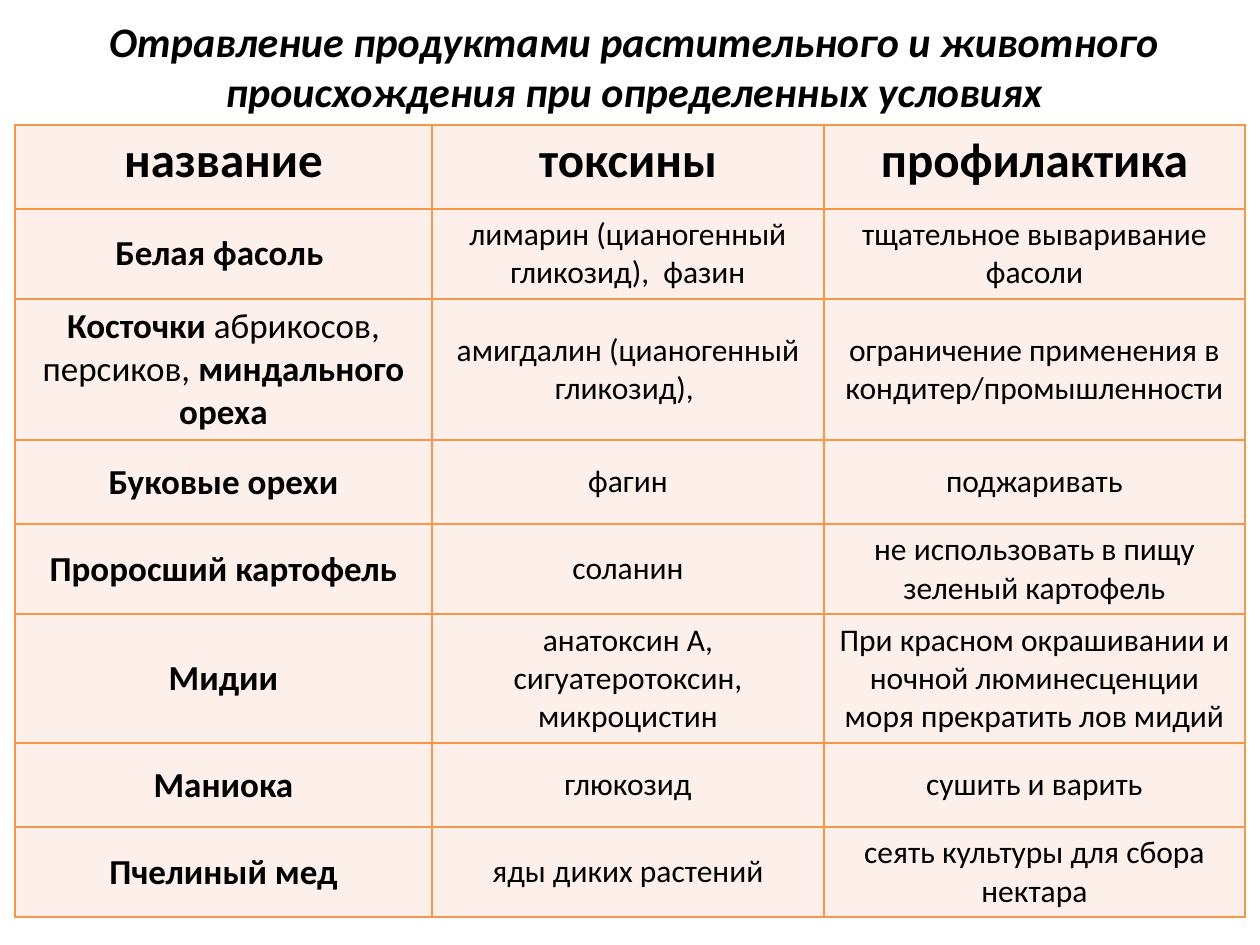
from dataclasses import dataclass

from lxml import etree
from pptx import Presentation
from pptx.dml.color import RGBColor
from pptx.enum.text import MSO_ANCHOR, PP_ALIGN
from pptx.oxml.ns import qn
from pptx.util import Emu, Pt

CENTER = PP_ALIGN.CENTER
TOP, MIDDLE = MSO_ANCHOR.TOP, MSO_ANCHOR.MIDDLE
TITLE_ONLY = 5
PX = 914400 // 126


@dataclass(frozen=True)
class Theme:
    """Colours, font and type sizes of the slide."""
    font: str = "Calibri"
    text: str = "000000"
    fill: str = "FDEFE9"
    border: str = "F79646"
    border_width: int = 1
    title: int = 24
    header: int = 28
    name: int = 20
    body: int = 18


THEME = Theme()

TITLE = "Отравление продуктами растительного и животного происхождения при определенных условиях"
HEADER = ("название", "токсины", "профилактика")
POISONS = [
    ("Белая фасоль ", "лимарин (цианогенный гликозид),  фазин", "тщательное вываривание фасоли"),
    ((("Косточки", True), (" абрикосов, персиков, ", False), ("миндального ореха", True)),
     "амигдалин (цианогенный гликозид), ", "ограничение применения в кондитер/промышленности"),
    ("Буковые орехи", "фагин", "поджаривать"),
    ("Проросший картофель", "соланин", "не использовать в пищу зеленый картофель"),
    ("Мидии", "анатоксин А, сигуатеротоксин, микроцистин",
     "При красном окрашивании и ночной люминесценции моря прекратить лов мидий"),
    ("Маниока", "глюкозид", "сушить и варить"),
    ("Пчелиный мед", "яды диких растений", "сеять культуры для сбора нектара"),
]
COLUMNS = (417, 392, 421)
ROWS = (84, 90, 141, 84, 90, 129, 84, 90)


def px(n):
    """Turn pixels into EMU."""
    return Emu(n * PX)


def write(p, content, size, bold, italic=False):
    """Fill a paragraph with plain text or with (text, bold) runs."""
    p.alignment = CENTER
    p.font.name, p.font.size = THEME.font, Pt(size)
    p.font.italic = italic
    p.font.color.rgb = RGBColor.from_string(THEME.text)
    if isinstance(content, str):
        p.font.bold = bold
        p.add_run().text = content
        return
    for text, run_bold in content:
        r = p.add_run()
        r.text, r.font.bold = text, run_bold


def add_borders(cell):
    """Draw the four edges of a cell."""
    tcPr = cell._tc.get_or_add_tcPr()
    for side in ("lnL", "lnR", "lnT", "lnB"):
        ln = etree.SubElement(tcPr, qn(f"a:{side}"), w=str(Pt(THEME.border_width)))
        fill = etree.SubElement(ln, qn("a:solidFill"))
        etree.SubElement(fill, qn("a:srgbClr"), val=THEME.border)


def add_title(s, x, y, w, h):
    """Place the slide title in the given box."""
    sp = s.shapes.title
    sp.left, sp.top, sp.width, sp.height = map(px, (x, y, w, h))
    tf = sp.text_frame
    tf.word_wrap, tf.vertical_anchor = True, MIDDLE
    write(tf.paragraphs[0], TITLE, THEME.title, True, italic=True)


def add_poison_table(s, x, y):
    """Place the table of foods, toxins and prevention at the given corner."""
    table = s.shapes.add_table(len(ROWS), len(COLUMNS), px(x), px(y),
                               px(sum(COLUMNS)), px(sum(ROWS))).table
    table.first_row = table.horz_banding = False
    for column, width in zip(table.columns, COLUMNS):
        column.width = px(width)
    for i, (row, height, contents) in enumerate(zip(table.rows, ROWS, [HEADER, *POISONS])):
        row.height = px(height)
        for j, (cell, content) in enumerate(zip(row.cells, contents)):
            add_borders(cell)
            cell.fill.solid()
            cell.fill.fore_color.rgb = RGBColor.from_string(THEME.fill)
            cell.vertical_anchor = MIDDLE if i else TOP
            size = THEME.header if i == 0 else THEME.body if j else THEME.name
            write(cell.text_frame.paragraphs[0], content, size, i == 0 or j == 0)


def main():
    """Build the slide and save it."""
    prs = Presentation()
    prs.slide_width, prs.slide_height = px(1260), px(945)
    s = prs.slides.add_slide(prs.slide_layouts[TITLE_ONLY])
    add_title(s, 35, 5, 1198, 121)
    add_poison_table(s, 15, 125)
    prs.save("out.pptx")


if __name__ == "__main__":
    main()
